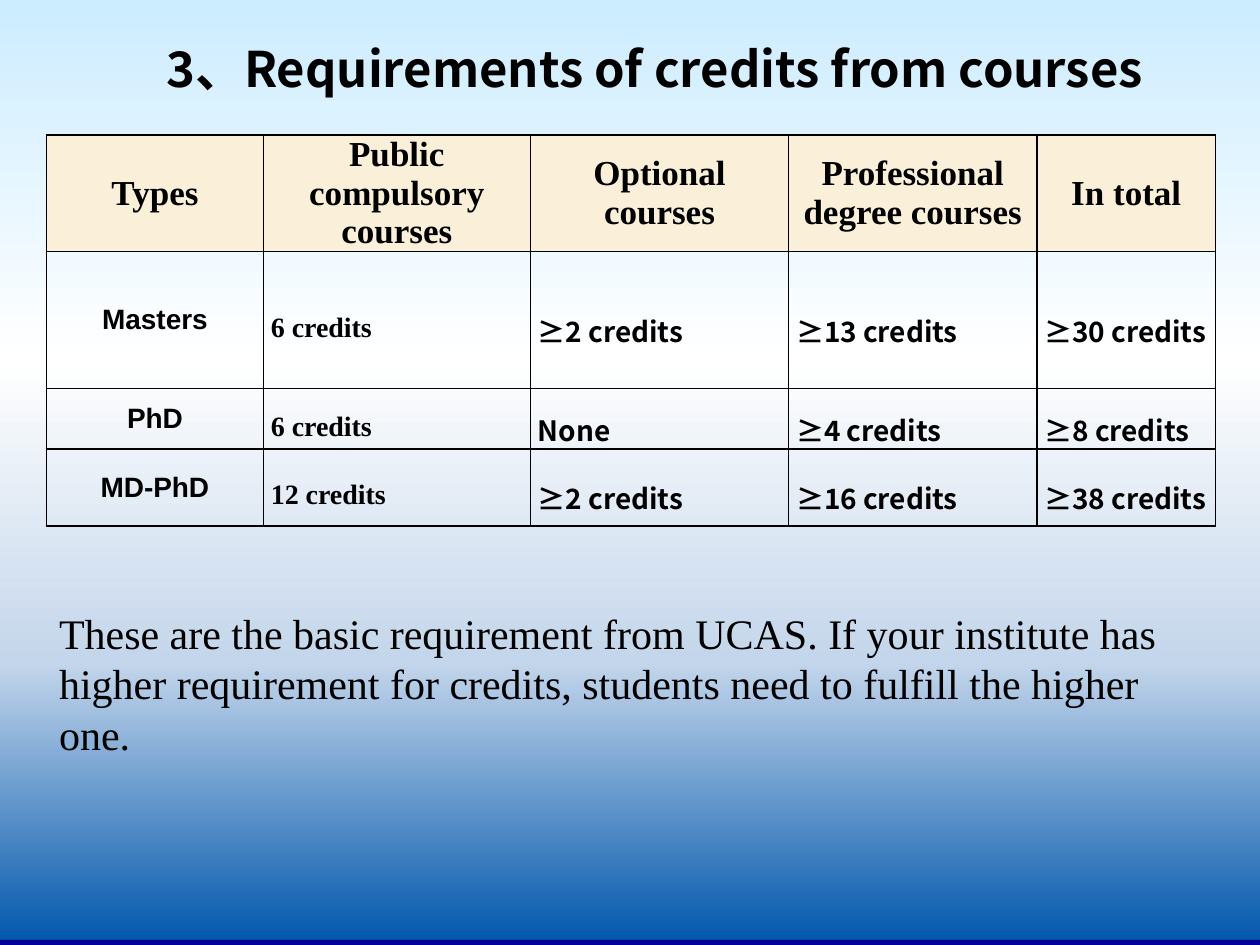
from lxml.etree import SubElement
from copy import deepcopy
from pptx import Presentation
from pptx.dml.color import RGBColor
from pptx.enum.shapes import MSO_SHAPE
from pptx.enum.text import MSO_ANCHOR, PP_ALIGN
from pptx.oxml.ns import qn
from pptx.util import Inches, Pt

SERIF, SANS = "Times New Roman", "Arial"
CJK_TITLE, CJK_BODY = "Noto Sans CJK SC", "Noto Sans CJK KR"


def color(value):
    return RGBColor.from_string(value)


def write(tf, text, font=SERIF, size=16, bold=True, align=PP_ALIGN.LEFT, spacing=None):
    p = tf.paragraphs[0]
    p.alignment = align
    p.line_spacing = spacing
    r = p.add_run()
    r.text = text
    r.font.size, r.font.bold, r.font.name = Pt(size), bold, font
    r.font.color.rgb = color("000000")
    SubElement(r.font._element, qn("a:ea"), typeface=font)


prs = Presentation()
prs.slide_width, prs.slide_height = Inches(10), Inches(7.5)
s = prs.slides.add_slide(prs.slide_layouts[5])

# Background gradient, top to bottom
fill = s.background.fill
fill.gradient()
fill.gradient_angle = 270
stops = s.element.find(".//" + qn("a:gsLst"))
for stop in list(stops):
    stops.append(deepcopy(stop))
gradient = [(0, "CCECFF"), (0.38, "FFFFFF"), (0.7, "C4D6EB"), (1, "0056AC")]
for stop, (position, value) in zip(fill.gradient_stops, gradient):
    stop.position = position
    stop.color.rgb = color(value)

# Bottom bar
bar = s.shapes.add_shape(MSO_SHAPE.RECTANGLE, 0, Inches(7.46), Inches(10), Inches(0.04))
bar.shadow.inherit = False
bar.fill.solid()
bar.fill.fore_color.rgb = color("000099")
bar.line.fill.background()

# Title
title = s.shapes.title
title.left, title.top = Inches(1.22), Inches(0.24)
title.width, title.height = Inches(8.28), Inches(0.6)
title.text_frame.vertical_anchor = MSO_ANCHOR.MIDDLE
write(title.text_frame, "3、Requirements of credits from courses", font=CJK_TITLE, size=28)

# Credits table
rows = [
    ["Types", "Public compulsory courses", "Optional courses",
     "Professional degree courses", "In total"],
    ["Masters", "6 credits", "≥2 credits", "≥13 credits", "≥30 credits"],
    ["PhD", "6 credits", "None", "≥4 credits", "≥8 credits"],
    ["MD-PhD", "12 credits", "≥2 credits", "≥16 credits", "≥38 credits"],
]
widths = [1.72, 2.12, 2.05, 1.97, 1.42]
heights = [0.89, 1.09, 0.4, 0.61]
table = s.shapes.add_table(len(rows), len(widths), Inches(0.37), Inches(1.07),
                           Inches(sum(widths)), Inches(sum(heights))).table
for column, width in zip(table.columns, widths):
    column.width = Inches(width)
for row, height in zip(table.rows, heights):
    row.height = Inches(height)

for i, texts in enumerate(rows):
    for j, text in enumerate(texts):
        cell = table.cell(i, j)
        is_label = i > 0 and j == 0
        cell.vertical_anchor = MSO_ANCHOR.MIDDLE
        cell.margin_left = cell.margin_right = Inches(0.1 if is_label else 0.06)
        cell.margin_top = cell.margin_bottom = Inches(0.05 if is_label else 0)

        # Borders come before the fill in the cell properties
        tcPr = cell._tc.get_or_add_tcPr()
        for side in ("a:lnL", "a:lnR", "a:lnT", "a:lnB"):
            ln = SubElement(tcPr, qn(side), w=str(Pt(1)))
            solid = SubElement(ln, qn("a:solidFill"))
            SubElement(solid, qn("a:srgbClr"), val="000000")

        if i == 0:
            cell.fill.solid()
            cell.fill.fore_color.rgb = color("FAF0D9")
            write(cell.text_frame, text, size=20, align=PP_ALIGN.CENTER)
        else:
            cell.fill.background()
            if is_label:
                write(cell.text_frame, text, font=SANS, align=PP_ALIGN.CENTER)
            else:
                write(cell.text_frame, text, font=SERIF if j == 1 else CJK_BODY, spacing=1.5)

# Note below the table
note = s.shapes.add_textbox(Inches(0.37), Inches(4.77), Inches(8.99), Inches(1.31))
note.text_frame.word_wrap = True
write(note.text_frame, "These are the basic requirement from UCAS. If your institute has higher "
      "requirement for credits, students need to fulfill the higher one.", size=24, bold=False)

prs.save("out.pptx")
